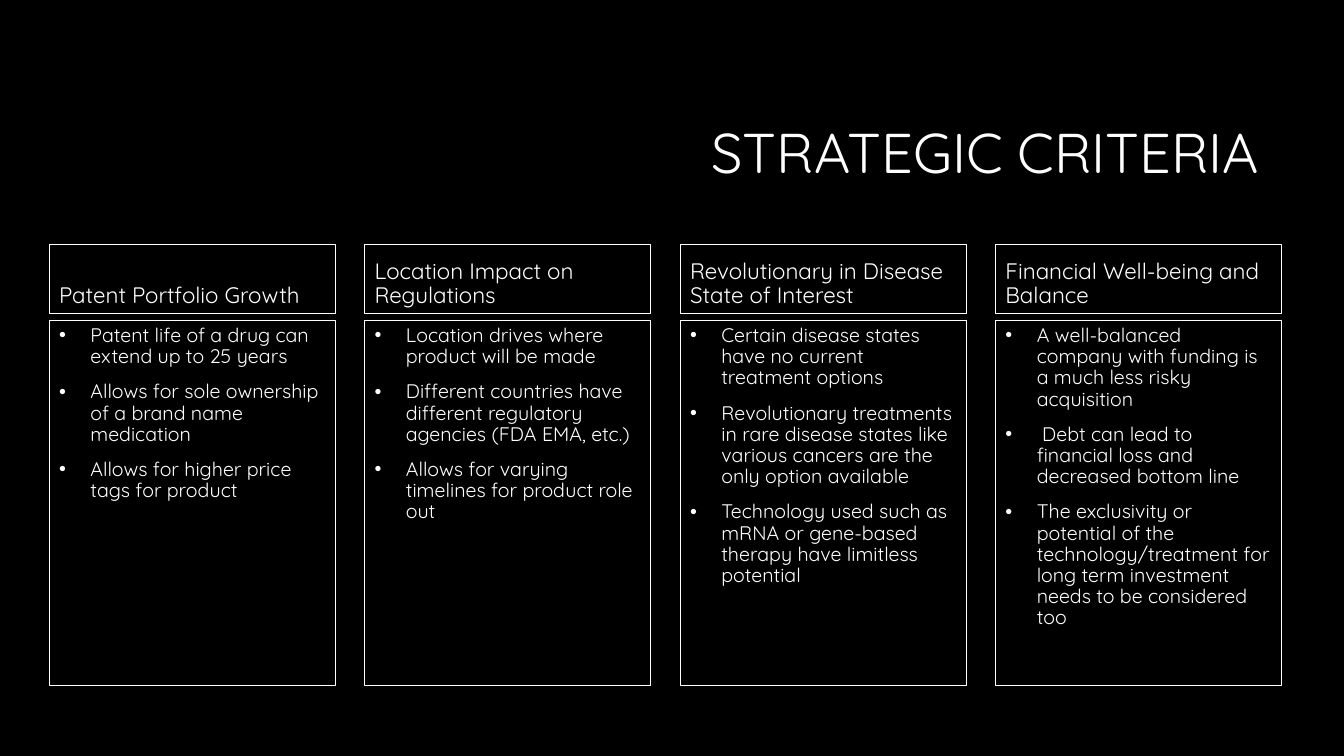
from lxml.etree import SubElement
from pptx import Presentation
from pptx.dml.color import RGBColor
from pptx.enum.text import MSO_ANCHOR, PP_ALIGN
from pptx.oxml.ns import qn
from pptx.util import Cm, Pt

# Content
TITLE = "STRATEGIC CRITERIA"
CRITERIA = [
    ("Patent Portfolio Growth", [
        "Patent life of a drug can extend up to 25 years",
        "Allows for sole ownership of a brand name medication",
        "Allows for higher price tags for product",
    ]),
    ("Location Impact on Regulations", [
        "Location drives where product will be made",
        "Different countries have different regulatory agencies (FDA EMA, etc.)",
        "Allows for varying timelines for product role out",
    ]),
    ("Revolutionary in Disease State of Interest", [
        "Certain disease states have no current treatment options",
        "Revolutionary treatments in rare disease states like various cancers "
        "are the only option available",
        "Technology used such as mRNA or gene-based therapy have limitless potential",
    ]),
    ("Financial Well-being and Balance", [
        "A well-balanced company with funding is a much less risky acquisition",
        " Debt can lead to financial loss and decreased bottom line",
        "The exclusivity or potential of the technology/treatment for long term "
        "investment needs to be considered too",
    ]),
]

# Format
COLORS = {"background": "000000", "text": "FFFFFF", "border": "FFFFFF"}
FONT = "Quicksand"
TITLE_FORMAT = {"line_spacing": 0.9, "alignment": PP_ALIGN.RIGHT}
TEXT_FORMAT = {"line_spacing": 0.9, "alignment": PP_ALIGN.LEFT}

# Layout in centimetres
COLUMN_LEFT, COLUMN_PITCH, COLUMN_WIDTH = 1.24, 7.95, 7.21
HEADING_TOP, HEADING_HEIGHT = 6.15, 1.75
BODY_TOP, BODY_HEIGHT = 8.08, 9.19
BULLET_INDENT = 0.79


def color(name):
    return RGBColor.from_string(COLORS[name])


def add_bullet(paragraph):
    properties = paragraph._p.get_or_add_pPr()
    properties.set("marL", str(Cm(BULLET_INDENT)))
    properties.set("indent", str(-Cm(BULLET_INDENT)))
    SubElement(properties, qn("a:buFont"), typeface="Arial")
    SubElement(properties, qn("a:buChar"), char="•")


def add_text(slide, box, lines, size, anchor, formats, bordered=True, bulleted=False):
    shape = slide.shapes.add_textbox(*(Cm(length) for length in box))
    if bordered:
        shape.line.color.rgb = color("border")
        shape.line.width = Pt(0.75)
    frame = shape.text_frame
    frame.word_wrap = True
    frame.vertical_anchor = anchor
    for index, line in enumerate(lines):
        paragraph = frame.paragraphs[0] if index == 0 else frame.add_paragraph()
        if bulleted:
            add_bullet(paragraph)
        for name, value in formats.items():
            setattr(paragraph, name, value)
        paragraph.space_before = Pt(10 if index else 0)
        run = paragraph.add_run()
        run.text = line
        for name, value in {"name": FONT, "size": Pt(size)}.items():
            setattr(run.font, name, value)
        run.font.color.rgb = color("text")


def main():
    presentation = Presentation()
    presentation.slide_width, presentation.slide_height = Cm(33.87), Cm(19.05)
    slide = presentation.slides.add_slide(presentation.slide_layouts[6])
    slide.background.fill.solid()
    slide.background.fill.fore_color.rgb = color("background")

    # Title
    add_text(slide, (8.05, 2.11, 23.93, 3.63), [TITLE], 40, MSO_ANCHOR.MIDDLE,
             TITLE_FORMAT, bordered=False)

    # One heading and one bulleted box per criterion
    for column, (heading, points) in enumerate(CRITERIA):
        left = COLUMN_LEFT + column * COLUMN_PITCH
        add_text(slide, (left, HEADING_TOP, COLUMN_WIDTH, HEADING_HEIGHT), [heading],
                 16, MSO_ANCHOR.BOTTOM, TEXT_FORMAT)
        add_text(slide, (left, BODY_TOP, COLUMN_WIDTH, BODY_HEIGHT), points,
                 14, MSO_ANCHOR.TOP, TEXT_FORMAT, bulleted=True)

    presentation.save("out.pptx")


if __name__ == "__main__":
    main()
